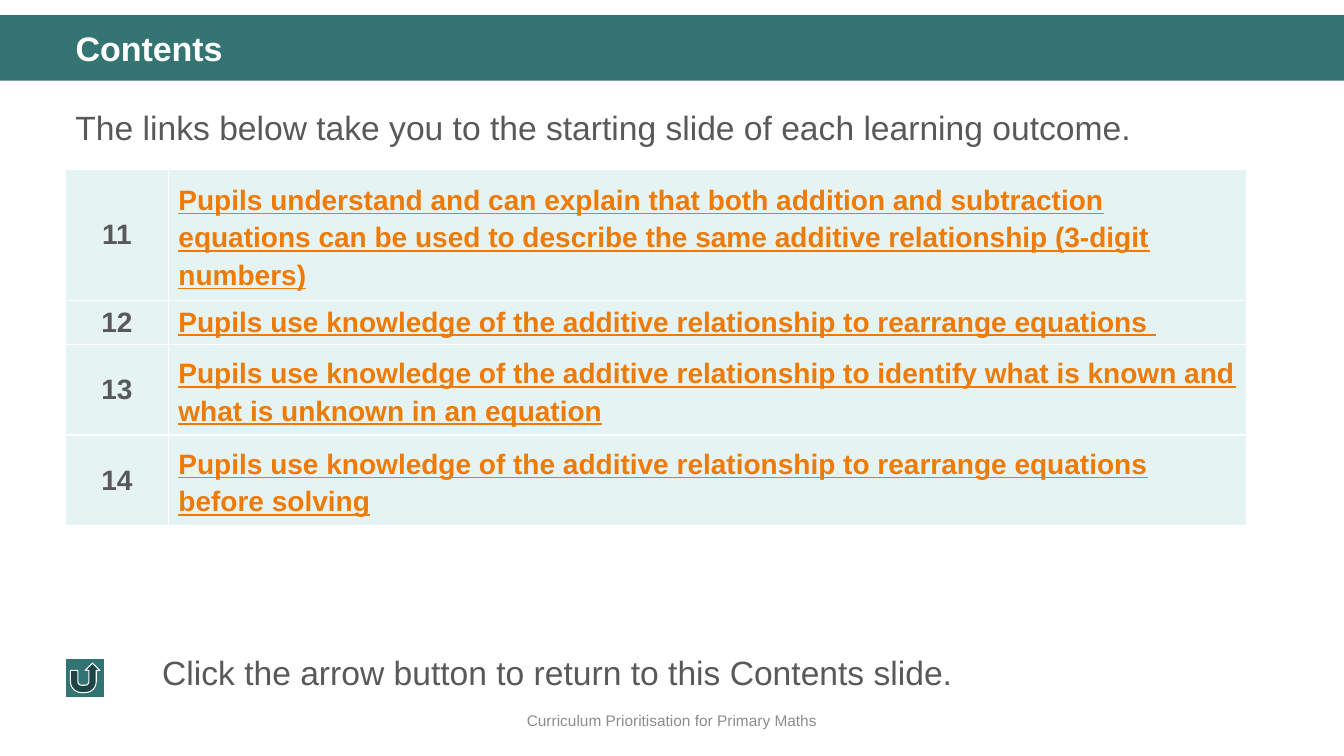
from lxml.etree import SubElement
from pptx import Presentation
from pptx.dml.color import RGBColor
from pptx.enum.shapes import MSO_SHAPE
from pptx.enum.text import MSO_ANCHOR, PP_ALIGN
from pptx.oxml.ns import qn
from pptx.util import Inches, Pt

WIDTH, HEIGHT = 13.33, 7.5
MARGIN = 0.65
CONTENT_WIDTH = WIDTH - MARGIN - 0.5
TEAL, PALE_TEAL, BUTTON_TEAL = "347574", "E5F3F2", "327473"
WHITE, GREY, FOOTER_GREY, ORANGE = "FFFFFF", "595959", "8C8C8C", "EE7B08"

OUTCOMES = [
    ("11", "Pupils understand and can explain that both addition and subtraction "
           "equations can be used to describe the same additive relationship (3-digit numbers)", 1.2, 1.21),
    ("12", "Pupils use knowledge of the additive relationship to rearrange equations ", 1.0, 0.41),
    ("13", "Pupils use knowledge of the additive relationship to identify what is known "
           "and what is unknown in an equation", 1.2, 0.84),
    ("14", "Pupils use knowledge of the additive relationship to rearrange equations "
           "before solving", 1.2, 0.84),
]


def color(hex_string):
    return RGBColor.from_string(hex_string)


def box(left, top, width, height):
    return [Inches(length) for length in (left, top, width, height)]


def write(frame, text, size=24, fill=GREY, bold=False, underline=False,
          align=PP_ALIGN.LEFT, spacing=1.0, before=0):
    frame.word_wrap = True
    paragraph = frame.paragraphs[0]
    paragraph.alignment = align
    paragraph.line_spacing = spacing
    paragraph.space_before = Pt(before)
    words = paragraph.add_run()
    words.text = text
    font = words.font
    font.name, font.size, font.bold, font.underline = "Arial", Pt(size), bold, underline
    font.color.rgb = color(fill)


def add_block(slide, area, kind, fill, outline=None):
    block = slide.shapes.add_shape(kind, *box(*area))
    block.shadow.inherit = False
    block.fill.solid()
    block.fill.fore_color.rgb = color(fill)
    if outline:
        block.line.color.rgb = color(outline)
        block.line.width = Pt(0.75)
    else:
        block.line.fill.background()


def add_text(slide, area, text, anchor=MSO_ANCHOR.TOP, **style):
    frame = slide.shapes.add_textbox(*box(*area)).text_frame
    frame.vertical_anchor = anchor
    write(frame, text, **style)


def add_heading(slide, left, top, width, height):
    add_block(slide, (left, top, width, height), MSO_SHAPE.RECTANGLE, TEAL)
    title = slide.shapes.title
    title.left, title.top, title.width, title.height = box(
        left + MARGIN, top + 0.12, CONTENT_WIDTH, 0.47)
    title.text_frame.vertical_anchor = MSO_ANCHOR.TOP
    write(title.text_frame, "Contents", size=24.3, fill=WHITE, bold=True, spacing=0.9)
    title.element.getparent().append(title.element)


def format_cell(cell, text, **style):
    cell.vertical_anchor = MSO_ANCHOR.MIDDLE
    write(cell.text_frame, text, size=20, bold=True, **style)
    properties = cell._tc.get_or_add_tcPr()
    for side in ("a:lnL", "a:lnR", "a:lnT", "a:lnB"):
        border = SubElement(properties, qn(side), w=str(Pt(1)))
        SubElement(SubElement(border, qn("a:solidFill")), qn("a:srgbClr"), val=WHITE)
    cell.fill.solid()
    cell.fill.fore_color.rgb = color(PALE_TEAL)


def add_outcomes(slide, left, top, width, number_width):
    height = sum(row_height for *_, row_height in OUTCOMES)
    table = slide.shapes.add_table(len(OUTCOMES), 2, *box(left, top, width, height)).table
    table.first_row = table.horz_banding = False
    table.columns[0].width = Inches(number_width)
    table.columns[1].width = Inches(width - number_width)
    for row, (number, outcome, spacing, row_height) in enumerate(OUTCOMES):
        table.rows[row].height = Inches(row_height)
        format_cell(table.cell(row, 0), number, align=PP_ALIGN.CENTER)
        format_cell(table.cell(row, 1), outcome, fill=ORANGE, underline=True, spacing=spacing)


def add_return_hint(slide, left, top, width, height):
    button = 0.39
    indent = 0.86
    add_block(slide, (left, top + 0.11, button, button),
              MSO_SHAPE.ACTION_BUTTON_RETURN, BUTTON_TEAL, WHITE)
    add_text(slide, (left + indent, top, width - indent, height),
             "Click the arrow button to return to this Contents slide.")


def add_contents_slide(deck):
    slide = deck.slides.add_slide(deck.slide_layouts[5])
    add_heading(slide, 0, 0.15, WIDTH, 0.65)
    add_text(slide, (0, 6.95, WIDTH, 0.4), "Curriculum Prioritisation for Primary Maths",
             anchor=MSO_ANCHOR.MIDDLE, size=11, fill=FOOTER_GREY, align=PP_ALIGN.CENTER)
    add_text(slide, (MARGIN, 0.93, CONTENT_WIDTH, 0.65),
             "The links below take you to the starting slide of each learning outcome.",
             spacing=1.2, before=10)
    add_outcomes(slide, MARGIN, 1.68, 11.71, 1.02)
    add_return_hint(slide, MARGIN, 6.42, CONTENT_WIDTH, 0.5)


def main():
    deck = Presentation()
    deck.slide_width, deck.slide_height = Inches(WIDTH), Inches(HEIGHT)
    add_contents_slide(deck)
    deck.save("out.pptx")


if __name__ == "__main__":
    main()
